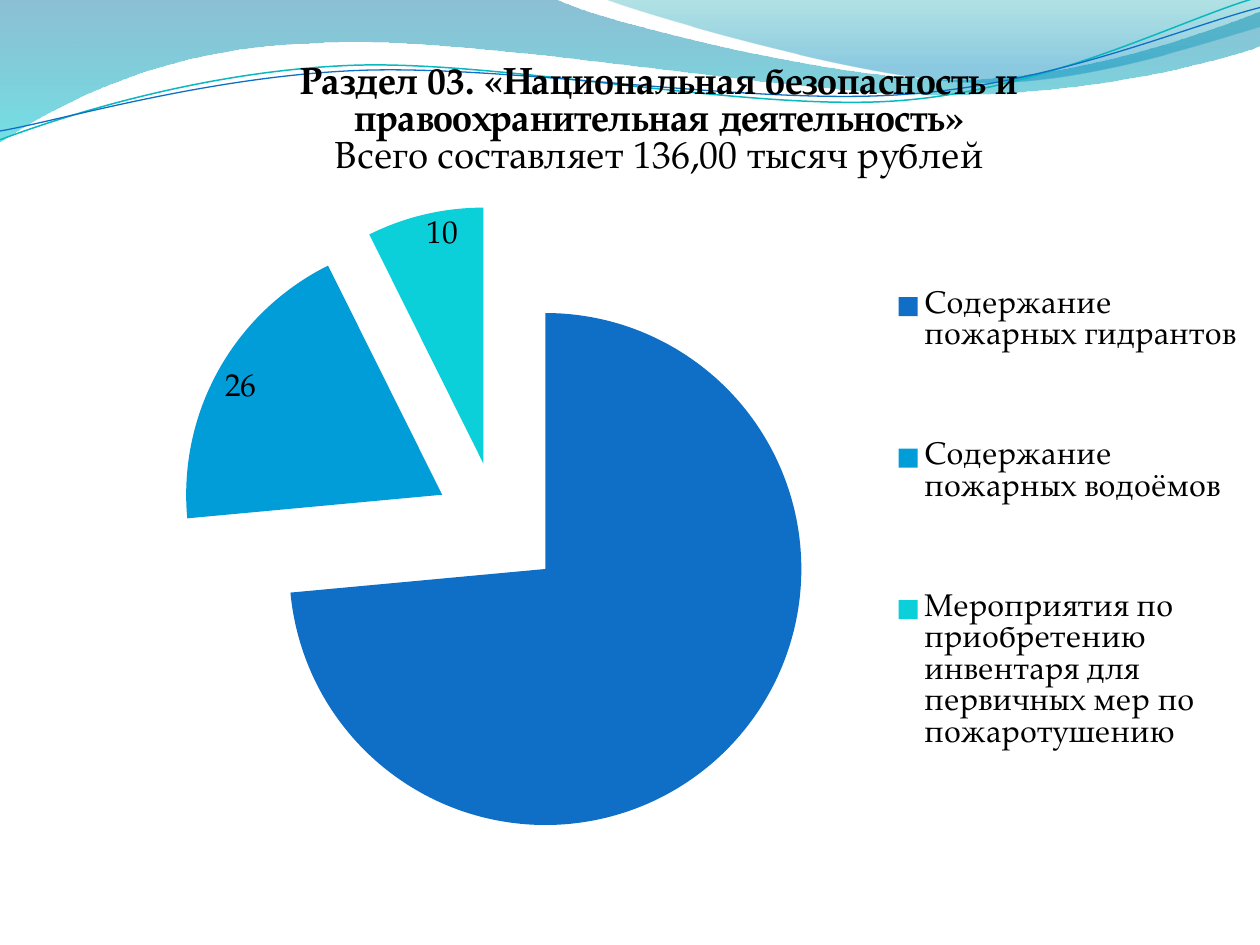
from lxml.etree import SubElement
from pptx import Presentation
from pptx.chart.data import CategoryChartData
from pptx.dml.color import RGBColor
from pptx.enum.chart import XL_CHART_TYPE, XL_LABEL_POSITION, XL_LEGEND_POSITION
from pptx.oxml import parse_xml
from pptx.oxml.ns import nsdecls, qn
from pptx.util import Inches, Pt

W, H = 10, 7.5
FONT = "TeX Gyre Pagella"
COLORS = {
    "text": "000000",
    "blue": "0F6FC6", "sky": "009DD9", "turquoise": "0BD0D9",
    "wave_top": "0074A1", "wave_bottom": "00C6CF",
    "corner_top": "00A1A9", "corner_bottom": "008BBF",
    "thin_teal": "0AB8BF",
}
UNITS = 100  # outline units per inch


def rgb(name):
    return RGBColor.from_string(COLORS[name])


def add_outline(slide, start, segments, closed):
    """Freeform from (x, y) line ends and six-number curves, in inches."""
    def units(value):
        return round(value * UNITS)

    anchors = [start] + [seg[-2:] for seg in segments]
    points = [(units(x), units(y)) for x, y in anchors]
    fb = slide.shapes.build_freeform(*points[0], scale=Inches(1) / UNITS)
    fb.add_line_segments(points[1:], close=closed)
    sp = fb.convert_to_shape()
    sp.shadow.inherit = False

    # Bend the straight pieces that have control points
    left, top = (min(axis) for axis in zip(*points))
    lines = list(sp._element.iter(qn("a:lnTo")))
    for line, seg in zip(lines, segments):
        if len(seg) == 6:
            line.tag = qn("a:cubicBezTo")
            for i in (2, 0):
                pt = parse_xml(f'<a:pt {nsdecls("a")} x="{units(seg[i]) - left}" '
                               f'y="{units(seg[i + 1]) - top}"/>')
                line.insert(0, pt)
    return sp


def add_wave(slide, start, segments, stops):
    """Closed band with a see-through gradient; stops are (place, colour, alpha %)."""
    sp = add_outline(slide, start, segments, True)
    sp.line.fill.background()
    sp.fill.gradient()
    sp.fill.gradient_angle = 270
    for stop, (place, color, _) in zip(sp.fill.gradient_stops, stops):
        stop.position = place
        stop.color.rgb = rgb(color)
    for clr, (_, _, alpha) in zip(sp._element.spPr.iter(qn("a:srgbClr")), stops):
        SubElement(clr, qn("a:alpha")).set("val", str(alpha * 1000))


def add_thin_curve(slide, start, segments, color, width):
    sp = add_outline(slide, start, segments, False)
    sp.fill.background()
    sp.line.color.rgb = rgb(color)
    sp.line.width = Pt(width)


def add_header_waves(slide):
    add_wave(slide, (0, 0), [
        (4.4, -0.01), (4.76, 0.17, 6.64, 0.63, 7.58, 0.63),
        (8.53, 0.63, 9.58, 0.26, 10, 0.09), (10.01, 0.36),
        (9.83, 0.44, 8.7, 0.76, 7.46, 0.75), (6.22, 0.75, 3.82, 0.28, 2.57, 0.34),
        (1.29, 0.36, 0.46, 0.83, -0.01, 1.13),
    ], [(0, "wave_top", 45), (1, "wave_bottom", 55)])
    add_wave(slide, (4.79, -0.01), [
        (5.09, 0.11, 6.82, 0.62, 7.69, 0.65), (8.56, 0.69, 9.61, 0.32, 10, 0.21), (10, 0),
    ], [(0, "corner_top", 30), (0.8, "corner_bottom", 45)])
    add_thin_curve(slide, (0, 1.11), [
        (0.48, 0.93, 1.58, 0.57, 2.77, 0.52), (3.95, 0.47, 5.93, 0.89, 7.13, 0.8),
        (8.33, 0.71, 9.38, 0.15, 9.98, -0.02),
    ], "thin_teal", 0.85)
    add_thin_curve(slide, (0, 1.04), [
        (0.47, 0.96, 1.64, 0.61, 2.83, 0.56), (4.03, 0.51, 5.97, 0.84, 7.17, 0.75),
        (8.36, 0.67, 9.41, 0.21, 10, 0.06),
    ], "blue", 0.75)


def set_layout(parent, index, box, inner=False):
    """Fix a chart part at x, y, w, h as shares of the chart."""
    for old in parent.findall(qn("c:layout")):
        parent.remove(old)
    target = '<c:layoutTarget val="inner"/>' if inner else ""
    values = "".join(f'<c:{k} val="{v}"/>' for k, v in zip("xywh", box))
    parent.insert(index, parse_xml(
        f'<c:layout {nsdecls("c")}><c:manualLayout>{target}'
        f'<c:xMode val="edge"/><c:yMode val="edge"/>{values}'
        "</c:manualLayout></c:layout>"))


def add_title(chart):
    chart.has_title = True
    tf = chart.chart_title.text_frame
    lines = [("Раздел 03. «Национальная безопасность и правоохранительная деятельность»", True),
             ("Всего составляет 136,00 тысяч рублей", False)]
    for i, (text, bold) in enumerate(lines):
        p = tf.paragraphs[0] if i == 0 else tf.add_paragraph()
        r = p.add_run()
        r.text = text
        for font in (p.font, r.font):
            font.name, font.size, font.bold = FONT, Pt(21.6), bold
            font.color.rgb = rgb("text")
    chart.chart_title.include_in_layout = False


def add_expense_pie(slide, x, y, w, h):
    data = CategoryChartData()
    data.categories = [
        "Содержание пожарных гидрантов",
        "Содержание пожарных водоёмов",
        "Мероприятия по приобретению инвентаря для первичных мер по пожаротушению",
    ]
    data.add_series("Series 1", (100, 26, 10))
    chart = slide.shapes.add_chart(
        XL_CHART_TYPE.PIE, Inches(x), Inches(y), Inches(w), Inches(h), data).chart
    chart.font.name, chart.font.size = FONT, Pt(18)
    chart.font.color.rgb = rgb("text")
    add_title(chart)

    # Slices, all pulled out
    plot = chart.plots[0]
    plot.vary_by_categories = True
    series = plot.series[0]
    for i, color in enumerate(("blue", "sky", "turquoise")):
        fill = series.points[i].format.fill
        fill.solid()
        fill.fore_color.rgb = rgb(color)
    series._element.find(qn("c:dPt")).addprevious(
        parse_xml(f'<c:explosion {nsdecls("c")} val="25"/>'))

    # Value labels, none on the largest slice
    labels = series.data_labels
    labels.show_value = True
    labels.position = XL_LABEL_POSITION.INSIDE_END
    labels._element.insert(0, parse_xml(
        f'<c:dLbl {nsdecls("c")}><c:idx val="0"/><c:delete val="1"/></c:dLbl>'))

    # Legend and plot places
    chart.has_legend = True
    legend = chart.legend
    legend.position = XL_LEGEND_POSITION.RIGHT
    legend.include_in_layout = False
    set_layout(legend._element, 1, (0.69, 0.19, 0.3, 0.73))
    plot_area = chart._chartSpace.chart.plotArea
    set_layout(plot_area, 0, (0.061, 0.194, 0.609, 0.733), inner=True)


def main():
    prs = Presentation()
    prs.slide_width, prs.slide_height = Inches(W), Inches(H)
    slide = prs.slides.add_slide(prs.slide_layouts[6])
    add_header_waves(slide)
    add_expense_pie(slide, 0.47, 0.29, 9.53, 6.93)
    prs.save("out.pptx")


if __name__ == "__main__":
    main()
